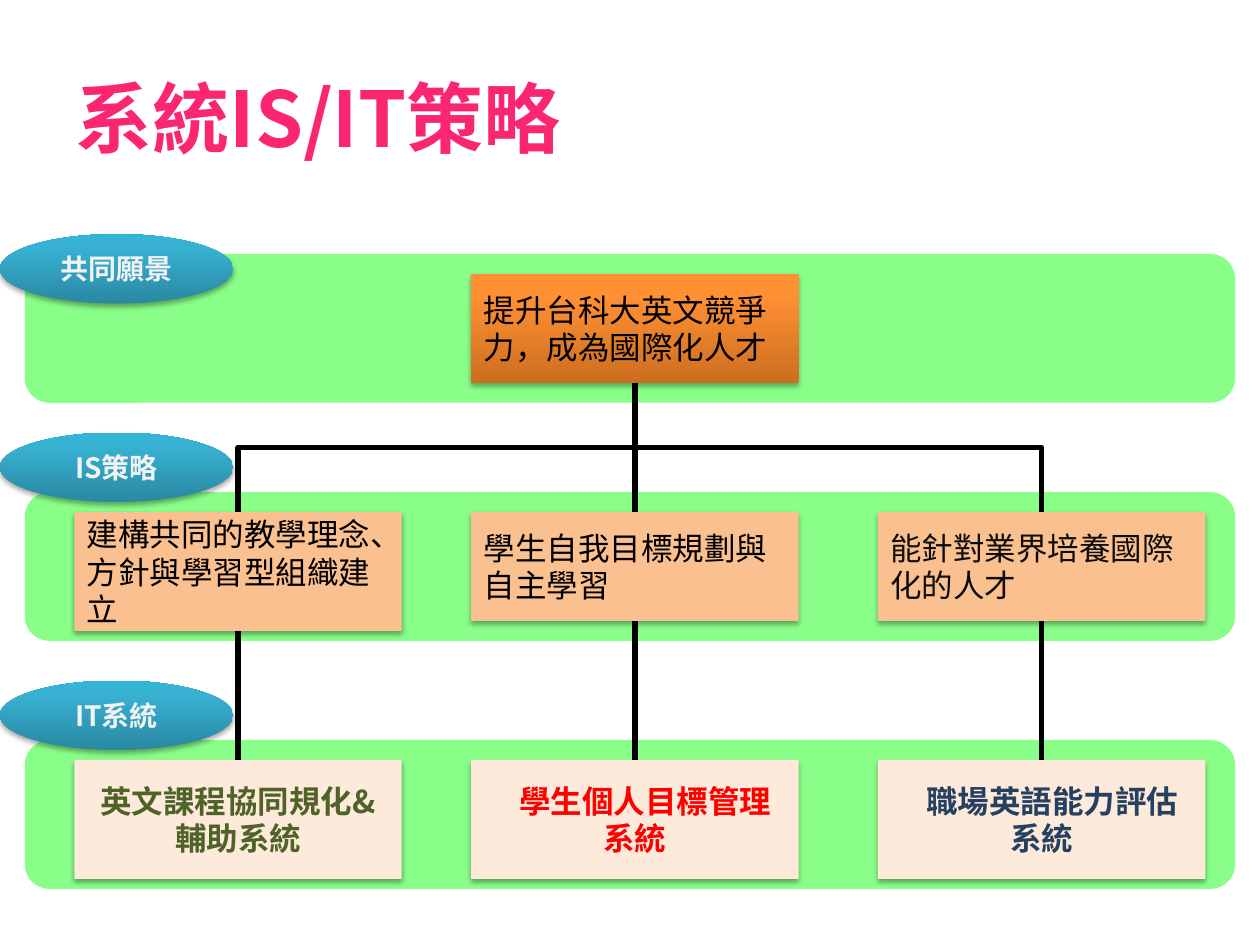
from copy import deepcopy
from dataclasses import dataclass
from lxml.etree import SubElement
from pptx import Presentation
from pptx.dml.color import RGBColor
from pptx.enum.shapes import MSO_CONNECTOR, MSO_SHAPE
from pptx.enum.text import MSO_ANCHOR, PP_ALIGN
from pptx.oxml.ns import qn
from pptx.util import Cm, Pt


@dataclass(frozen=True)
class Theme:
    font: str = "Noto Sans CJK SC"
    title: str = "FA2672"
    band: str = "89FF89"
    vision: tuple = ("CC6E20", "FF9034", "FF9136")
    label: tuple = ("2A88A2", "37B1D2", "34B4D6")
    strategy: str = "FAC090"
    system: str = "FDEADA"
    text: str = "000000"
    soft_text: str = "0D0D0D"
    label_text: str = "F2F2F2"
    line: str = "000000"
    title_size: int = 44
    box_size: int = 18
    label_size: int = 16
    line_width: int = 3


T = Theme()
TITLE = "系統IS/IT策略"
BANDS = [("共同願景", 5.12, 0.4), ("IS策略", 9.92, 1.2), ("IT系統", 14.92, 1.2)]
COLUMNS = [1.5, 9.5, 17.7]
VISION = "提升台科大英文競爭力，成為國際化人才"
STRATEGIES = [
    ("建構共同的教學理念、方針與學習型組織建立", T.text, 2.4),
    ("學生自我目標規劃與自主學習", T.text, 2.2),
    ("能針對業界培養國際化的人才", T.soft_text, 2.2),
]
SYSTEMS = [
    ("英文課程協同規化&輔助系統", "4F6228", 0),
    ("學生個人目標管理系統", "FF0000", 0.42),
    ("職場英語能力評估系統", "254061", 0.42),
]
BOX_W, BOX_INSET = 6.6, 0.4


def set_text(sp, text, size, color, bold=False, align=PP_ALIGN.LEFT, indent=0):
    tf = sp.text_frame
    tf.word_wrap = True
    tf.vertical_anchor = MSO_ANCHOR.MIDDLE
    p = tf.paragraphs[0]
    p.text = text
    p.alignment = align
    if indent:
        p._p.get_or_add_pPr().set("indent", str(Cm(indent)))
    font = p.font
    font.size, font.bold, font.name = Pt(size), bold, T.font
    font.color.rgb = RGBColor.from_string(color)
    SubElement(p._p.pPr.find(qn("a:defRPr")), qn("a:ea"), typeface=T.font)


def set_fill(sp, fill):
    if isinstance(fill, str):
        sp.fill.solid()
        sp.fill.fore_color.rgb = RGBColor.from_string(fill)
        return
    sp.fill.gradient()
    sp.fill.gradient_angle = 90
    stops = sp._element.spPr.find(".//" + qn("a:gsLst"))
    stops.append(deepcopy(stops[-1]))
    for stop, position, color in zip(sp.fill.gradient_stops, (0, 0.8, 1), fill):
        stop.position = position
        stop.color.rgb = RGBColor.from_string(color)


def add_shape(s, kind, left, top, width, height, fill, shadow=True):
    sp = s.shapes.add_shape(kind, Cm(left), Cm(top), Cm(width), Cm(height))
    set_fill(sp, fill)
    sp.line.fill.background()
    sp.shadow.inherit = False
    if shadow:
        effects = sp._element.spPr.find(qn("a:effectLst"))
        outer = SubElement(effects, qn("a:outerShdw"), blurRad=str(Pt(3.1)),
                           dist=str(Pt(1.8)), dir="5400000", rotWithShape="0")
        color = SubElement(outer, qn("a:srgbClr"), val="000000")
        SubElement(color, qn("a:alpha"), val="35000")
    return sp


def connect(s, upper, lower):
    x1, y1 = upper.left + upper.width // 2, upper.top + upper.height
    x2, y2 = lower.left + lower.width // 2, lower.top
    kind = MSO_CONNECTOR.STRAIGHT if x1 == x2 else MSO_CONNECTOR.ELBOW
    cxn = s.shapes.add_connector(kind, x1, y1, x2, y2)
    cxn.begin_connect(upper, 2)
    cxn.end_connect(lower, 0)
    cxn.line.color.rgb = RGBColor.from_string(T.line)
    cxn.line.width = Pt(T.line_width)
    SubElement(cxn._element.spPr, qn("a:effectLst"))
    if x1 != x2:
        drop, span = y2 - y1, abs(x2 - x1)
        cxn.left, cxn.top = (x1 + x2 - drop) // 2, (y1 + y2 - span) // 2
        cxn.width, cxn.height = drop, span
        xfrm = cxn._element.spPr.find(qn("a:xfrm"))
        xfrm.set("rot", "5400000" if x2 < x1 else "16200000")
        xfrm.set("flipH", "0" if x2 < x1 else "1")


def main():
    prs = Presentation()
    prs.slide_width, prs.slide_height = Cm(25.4), Cm(19.05)
    s = prs.slides.add_slide(prs.slide_layouts[5])

    title = s.shapes.title
    title.left, title.top, title.width, title.height = Cm(1.27), Cm(0.76), Cm(13.44), Cm(3.18)
    set_text(title, TITLE, T.title_size, T.title, bold=True)

    for _, top, _ in BANDS:
        add_shape(s, MSO_SHAPE.ROUNDED_RECTANGLE, 0.5, top, 24.4, 3, T.band, shadow=False)

    vision_y, strategy_y, system_y = (top + BOX_INSET for _, top, _ in BANDS)
    vision = add_shape(s, MSO_SHAPE.RECTANGLE, COLUMNS[1], vision_y, BOX_W, 2.2, T.vision)
    set_text(vision, VISION, T.box_size, T.text)

    for x, (strategy, color, height), (system, accent, indent) in zip(COLUMNS, STRATEGIES, SYSTEMS):
        upper = add_shape(s, MSO_SHAPE.RECTANGLE, x, strategy_y, BOX_W, height, T.strategy)
        set_text(upper, strategy, T.box_size, color)
        lower = add_shape(s, MSO_SHAPE.RECTANGLE, x, system_y, BOX_W, 2.4, T.system)
        set_text(lower, system, T.box_size, accent, True, PP_ALIGN.CENTER, indent)
        connect(s, vision, upper)
        connect(s, upper, lower)

    for label, top, rise in BANDS:
        sp = add_shape(s, MSO_SHAPE.OVAL, 0, top - rise, 4.7, 1.4, T.label)
        set_text(sp, label, T.label_size, T.label_text, True, PP_ALIGN.CENTER)

    prs.save("out.pptx")


if __name__ == "__main__":
    main()
